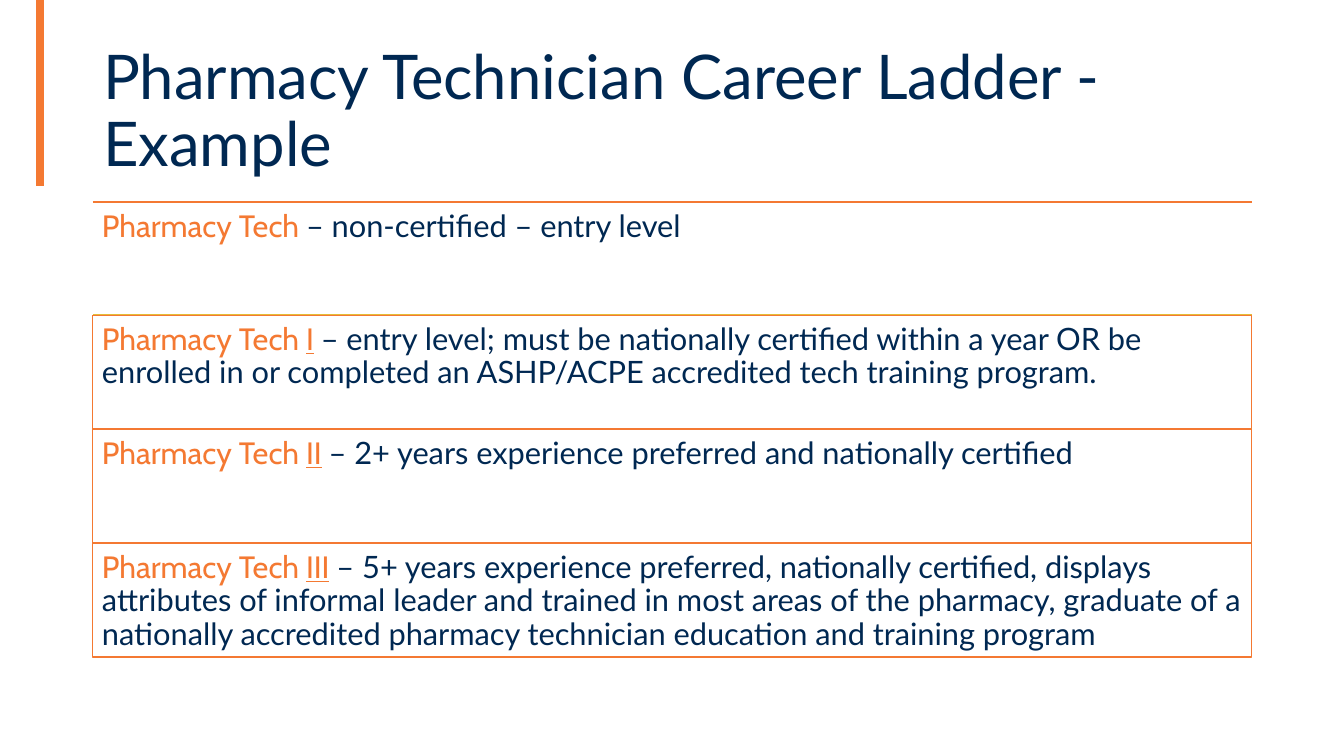
from pptx import Presentation
from pptx.dml.color import RGBColor
from pptx.enum.shapes import MSO_CONNECTOR
from pptx.enum.text import MSO_ANCHOR, PP_ALIGN
from pptx.oxml.ns import qn
from pptx.util import Pt
from lxml.etree import SubElement

TITLE = "Pharmacy Technician Career Ladder - Example"
ROLE = "Pharmacy Tech "
LEVELS = [
    ("", "– non-certified – entry level", "F47932"),
    ("I", "– entry level; must be nationally certified within a year OR be enrolled in "
          "or completed an ASHP/ACPE accredited tech training program.", "E4BD39"),
    ("II", "– 2+ years experience preferred and nationally certified", "BAD442"),
    ("III", "– 5+ years experience preferred, nationally certified, displays attributes "
            "of informal leader and trained in most areas of the pharmacy, graduate of a "
            "nationally accredited pharmacy technician education and training program", "7DC24B"),
]
ORANGE, NAVY = "F47932", "002852"
LEFT, WIDTH = 93, 1159
LADDER_TOP, LADDER_HEIGHT = 202, 455
INSET = 9


def px(length):
    return round(length * 914400 / 100.8)


def color(value):
    return RGBColor.from_string(value)


def add_line(x1, y1, x2, y2, stroke, weight):
    line = slide.shapes.add_connector(MSO_CONNECTOR.STRAIGHT, px(x1), px(y1), px(x2), px(y2))
    line.line.color.rgb = color(stroke)
    line.line.width = Pt(weight)
    SubElement(line._element.spPr, qn("a:effectLst"))


def add_run(paragraph, text, size, font, fill, underline=None):
    run = paragraph.add_run()
    run.text = text
    run.font.size = Pt(size)
    run.font.name = font
    run.font.color.rgb = color(fill)
    run.font.underline = underline


prs = Presentation()
prs.slide_width, prs.slide_height = px(1344), px(756)
slide = prs.slides.add_slide(prs.slide_layouts[5])

add_line(40, 0, 40, 186, ORANGE, 6)

title = slide.shapes.title
title.left, title.top, title.width, title.height = px(LEFT), px(40), px(WIDTH), px(146)
title.text_frame.vertical_anchor = MSO_ANCHOR.MIDDLE
heading = title.text_frame.paragraphs[0]
heading.alignment = PP_ALIGN.LEFT
heading.line_spacing = 0.9
add_run(heading, TITLE, 44, "Lato", NAVY)

for index, (grade, requirement, rule) in enumerate(LEVELS):
    top = LADDER_TOP + index * LADDER_HEIGHT // len(LEVELS)
    bottom = LADDER_TOP + (index + 1) * LADDER_HEIGHT // len(LEVELS)
    add_line(LEFT, top, LEFT + WIDTH, top, rule, 1)
    level = slide.shapes.add_textbox(px(LEFT), px(top), px(WIDTH), px(bottom - top))
    frame = level.text_frame
    frame.word_wrap = True
    frame.margin_left = frame.margin_right = px(INSET)
    frame.margin_top = frame.margin_bottom = px(INSET)
    sentence = frame.paragraphs[0]
    sentence.line_spacing = 0.9
    add_run(sentence, ROLE, 22, "Cabin", ORANGE)
    if grade:
        level.line.color.rgb = color(ORANGE)
        level.line.width = Pt(0.75)
        add_run(sentence, grade, 22, "Cabin", ORANGE, True)
        add_run(sentence, " ", 22, "Cabin", ORANGE)
    add_run(sentence, requirement, 22, "Lato", NAVY)

prs.save("out.pptx")
